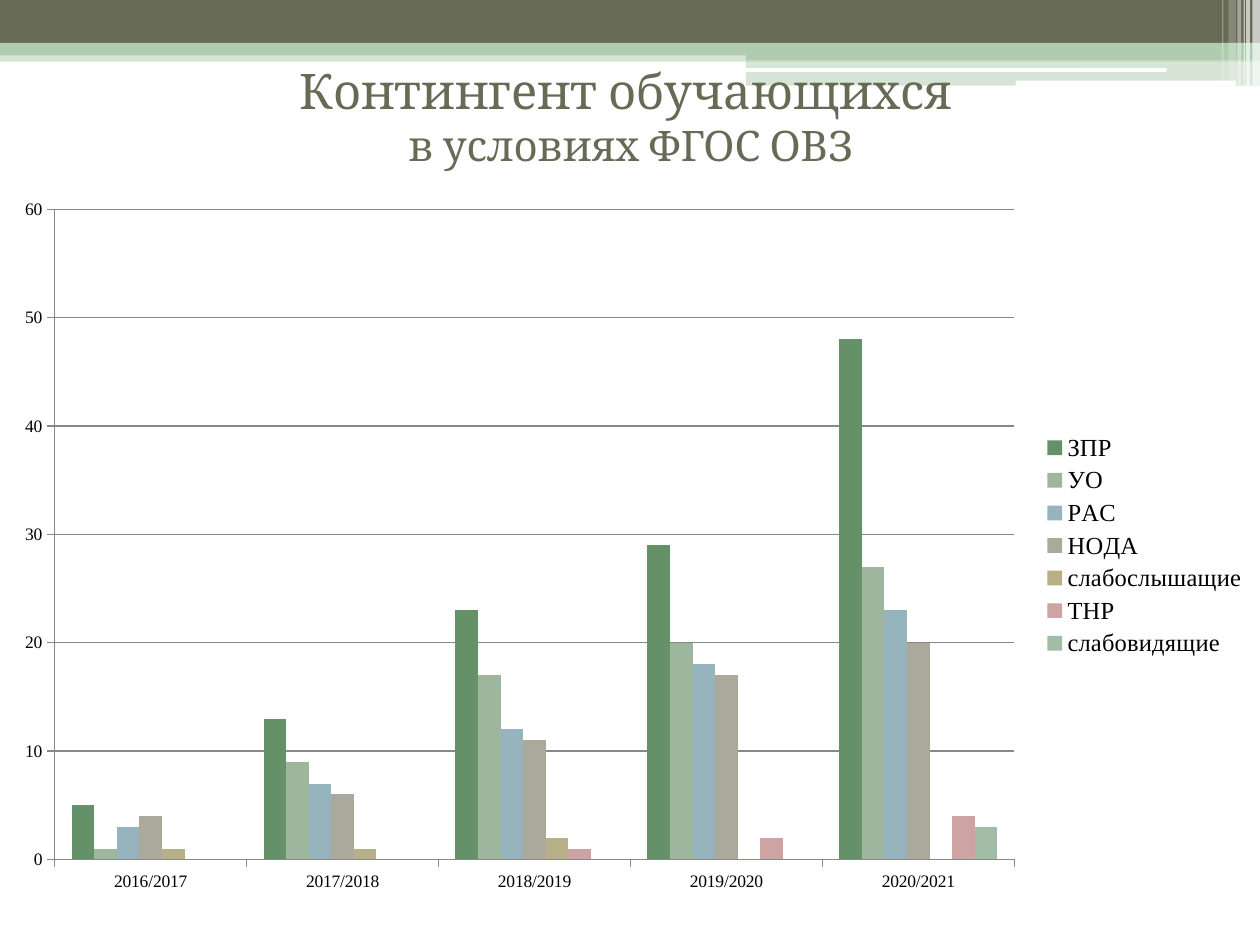
from lxml import etree
from pptx import Presentation
from pptx.chart.data import CategoryChartData
from pptx.dml.color import RGBColor
from pptx.enum.chart import XL_CHART_TYPE, XL_LEGEND_POSITION, XL_TICK_MARK
from pptx.enum.shapes import MSO_SHAPE
from pptx.enum.text import MSO_ANCHOR, PP_ALIGN
from pptx.oxml.ns import qn
from pptx.util import Pt

RECTANGLE, ROUNDED = MSO_SHAPE.RECTANGLE, MSO_SHAPE.ROUNDED_RECTANGLE
OLIVE = RGBColor(0x67, 0x6A, 0x55)
GREEN = RGBColor(0xB0, 0xCC, 0xB0)
WHITE = RGBColor(0xFF, 0xFF, 0xFF)
BLACK = RGBColor(0, 0, 0)
GRID_GRAY = RGBColor(0x88, 0x88, 0x88)
TITLE_FONT, CHART_FONT = "Cambria", "Times New Roman"

TITLE_LINES = [("Контингент обучающихся ", 28), ("в условиях ФГОС ОВЗ", 24)]
YEARS = ["2016/2017", "2017/2018", "2018/2019", "2019/2020", "2020/2021"]
SERIES = [
    ("ЗПР", (5, 13, 23, 29, 48), RGBColor(0x64, 0x91, 0x68)),
    ("УО", (1, 9, 17, 20, 27), RGBColor(0x9E, 0xB5, 0x9E)),
    ("РАС", (3, 7, 12, 18, 23), RGBColor(0x96, 0xB4, 0xBE)),
    ("НОДА", (4, 6, 11, 17, 20), RGBColor(0xAB, 0xA9, 0x9B)),
    ("слабослышащие", (1, 1, 2, 0, None), RGBColor(0xB7, 0xAF, 0x85)),
    ("ТНР", (None, None, 1, 2, 4), RGBColor(0xCE, 0xA3, 0xA3)),
    ("слабовидящие", (None, None, None, None, 3), RGBColor(0xA3, 0xBC, 0xA5)),
]

# left, top, width, height, colour, opacity in percent
BANDS = [
    (0, 28.8, 720, 6.48, GREEN, 50),
    (0, 0, 720, 24.48, OLIVE, 100),
    (0, 24.48, 720, 7.2, GREEN, 100),
    (426.24, 28.08, 293.76, 6.48, GREEN, 100),
    (426.24, 34.56, 293.76, 14.4, GREEN, 50),
]
WHITE_BARS = [(425.52, 38.88, 241.2, 2.16), (580.32, 46.08, 126, 2.88)]
# left, width, height, opacity in percent
STRIPES = [
    (715.68, 4.32, 48.96, 65),
    (712.08, 2.16, 48.96, 65),
    (710.64, 0.72, 48.96, 60),
    (707.04, 2.16, 48.96, 40),
    (702, 4.32, 46.08, 20),
    (698.4, 0.72, 46.08, 30),
]


def add_block(slide, left, top, width, height, color, opacity=100, kind=RECTANGLE):
    shape = slide.shapes.add_shape(kind, Pt(left), Pt(top), Pt(width), Pt(height))
    shape.shadow.inherit = False
    shape.fill.solid()
    shape.fill.fore_color.rgb = color
    shape.line.fill.background()
    if opacity < 100:
        color_element = shape.fill._xPr.find(".//" + qn("a:srgbClr"))
        etree.SubElement(color_element, qn("a:alpha"), val=str(opacity * 1000))


def format_font(font, size, name=CHART_FONT, color=BLACK):
    font.size, font.name = Pt(size), name
    font.color.rgb = color


def add_text(slide, lines, left, top, width, height, *, name, color):
    """Add one centred paragraph whose (text, size) lines are split by line breaks."""
    box = slide.shapes.add_textbox(Pt(left), Pt(top), Pt(width), Pt(height))
    frame = box.text_frame
    frame.word_wrap = True
    frame.vertical_anchor = MSO_ANCHOR.MIDDLE
    paragraph = frame.paragraphs[0]
    paragraph.alignment = PP_ALIGN.CENTER
    for index, (text, size) in enumerate(lines):
        if index:
            paragraph.add_line_break()
        run = paragraph.add_run()
        run.text = text
        format_font(run.font, size, name, color)


def add_enrolment_chart(slide, left, top, width, height):
    data = CategoryChartData()
    data.categories = YEARS
    for name, values, _ in SERIES:
        data.add_series(name, values)
    chart = slide.shapes.add_chart(
        XL_CHART_TYPE.COLUMN_CLUSTERED, Pt(left), Pt(top), Pt(width), Pt(height), data
    ).chart
    chart.has_title = False
    format_font(chart.font, 10, TITLE_FONT)

    plot = chart.plots[0]
    plot.gap_width, plot.overlap = 150, 0
    plot.vary_by_categories = False
    for series, (_, _, color) in zip(plot.series, SERIES):
        series.format.fill.solid()
        series.format.fill.fore_color.rgb = color

    for axis in (chart.category_axis, chart.value_axis):
        format_font(axis.tick_labels.font, 10)
        axis.major_tick_mark = XL_TICK_MARK.OUTSIDE
        axis.format.line.color.rgb = GRID_GRAY
        axis.format.line.width = Pt(0.75)
    value_axis = chart.value_axis
    value_axis.minimum_scale, value_axis.maximum_scale = 0, 60
    value_axis.major_unit = 10
    value_axis.has_major_gridlines = True
    value_axis.major_gridlines.format.line.color.rgb = GRID_GRAY
    value_axis.major_gridlines.format.line.width = Pt(0.75)

    chart.has_legend = True
    chart.legend.position = XL_LEGEND_POSITION.RIGHT
    chart.legend.include_in_layout = False
    format_font(chart.legend.font, 14)


def main():
    presentation = Presentation()
    presentation.slide_width, presentation.slide_height = Pt(720), Pt(540)
    slide = presentation.slides.add_slide(presentation.slide_layouts[6])
    for band in BANDS:
        add_block(slide, *band)
    for bar in WHITE_BARS:
        add_block(slide, *bar, WHITE, kind=ROUNDED)
    for left, width, height, opacity in STRIPES:
        add_block(slide, left, 0, width, height, WHITE, opacity)
    add_text(slide, TITLE_LINES, 36.72, 37.44, 648, 56.88, name=TITLE_FONT, color=OLIVE)
    add_enrolment_chart(slide, 0, 105.84, 720, 411.84)
    presentation.save("out.pptx")


if __name__ == "__main__":
    main()
